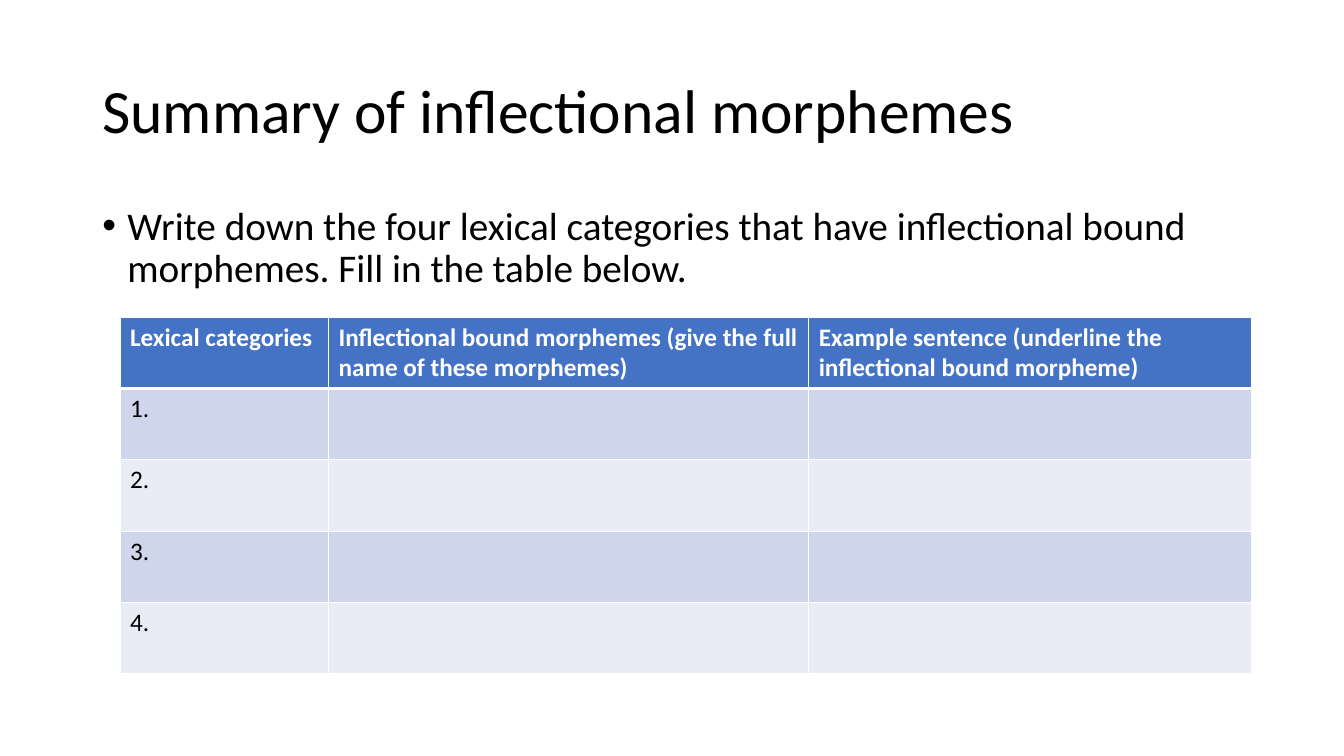
from dataclasses import dataclass

from lxml.etree import SubElement
from pptx import Presentation
from pptx.dml.color import RGBColor as Color
from pptx.enum.text import MSO_ANCHOR as Anchor
from pptx.oxml.ns import qn
from pptx.util import Pt


@dataclass(frozen=True)
class Theme:
    """Colours, font and type sizes of the slide."""
    font: str = "Calibri"
    text: str = "000000"
    inverse: str = "FFFFFF"
    header: str = "4472C4"
    bands: tuple = ("CFD5EA", "E9EBF5")
    title_size: int = 44
    body_size: int = 28
    table_size: int = 18
    thin: int = 1
    thick: int = 3


class SlideBuilder:
    """Adds styled elements to one slide."""

    def __init__(self, slide, theme):
        """Keep the slide and its theme."""
        self.slide = slide
        self.theme = theme

    def style(self, paragraph, size, color, bold=False):
        """Format every run of a paragraph."""
        for run in paragraph.runs:
            font = run.font
            font.name, font.size, font.bold = self.theme.font, Pt(size), bold
            font.color.rgb = Color.from_string(color)

    def text(self, box, text, size, anchor=Anchor.TOP):
        """Add a wrapped text box and return its paragraph."""
        shape = self.slide.shapes.add_textbox(*map(Pt, box))
        text_frame = shape.text_frame
        text_frame.word_wrap = True
        text_frame.vertical_anchor = anchor
        text_frame.text = text
        paragraph = text_frame.paragraphs[0]
        paragraph.line_spacing = 0.9
        self.style(paragraph, size, self.theme.text)
        return paragraph

    def bullet(self, box, text, size, indent=18):
        """Add a text box with one bulleted paragraph."""
        paragraph = self.text(box, text, size)
        paragraph.space_before = Pt(10)
        properties = paragraph._p.get_or_add_pPr()
        properties.set("marL", str(Pt(indent)))
        properties.set("indent", str(Pt(-indent)))
        SubElement(properties, qn("a:buFont"), typeface="Arial")
        SubElement(properties, qn("a:buChar"), char="•")

    def borders(self, cell, top, bottom):
        """Draw the four borders of a cell."""
        properties = cell._tc.get_or_add_tcPr()
        widths = {"L": self.theme.thin, "R": self.theme.thin, "T": top, "B": bottom}
        for side, width in widths.items():
            line = SubElement(properties, qn(f"a:ln{side}"), w=str(Pt(width)))
            fill = SubElement(line, qn("a:solidFill"))
            SubElement(fill, qn("a:srgbClr"), val=self.theme.inverse)

    def table(self, left, top, widths, row_height, rows):
        """Add a banded table whose first row is the header."""
        theme = self.theme
        frame = self.slide.shapes.add_table(
            len(rows), len(widths), Pt(left), Pt(top),
            Pt(sum(widths)), Pt(row_height * len(rows)))
        table = frame.table
        for column, width in zip(table.columns, widths):
            column.width = Pt(width)
        for index, texts in enumerate(rows):
            is_header = index == 0
            fill = theme.header if is_header else theme.bands[(index - 1) % 2]
            color = theme.inverse if is_header else theme.text
            above = theme.thick if index == 1 else theme.thin
            below = theme.thick if is_header else theme.thin
            for cell, text in zip(table.rows[index].cells, texts):
                self.borders(cell, above, below)
                cell.fill.solid()
                cell.fill.fore_color.rgb = Color.from_string(fill)
                cell.text_frame.text = text
                self.style(cell.text_frame.paragraphs[0], theme.table_size, color, is_header)


def main():
    """Build and save the presentation."""
    presentation = Presentation()
    presentation.slide_width, presentation.slide_height = Pt(960), Pt(540)
    slide = presentation.slides.add_slide(presentation.slide_layouts[6])
    theme = Theme()
    builder = SlideBuilder(slide, theme)
    builder.text((66, 28.75, 828, 104.4), "Summary of inflectional morphemes",
                 theme.title_size, Anchor.MIDDLE)
    builder.bullet((66, 143.75, 828, 342.6),
                   "Write down the four lexical categories that have inflectional bound "
                   "morphemes. Fill in the table below.", theme.body_size)
    header = ("Lexical categories",
              "Inflectional bound morphemes (give the full name of these morphemes)",
              "Example sentence (underline the inflectional bound morpheme)")
    categories = [(f"{number}.", "", "") for number in range(1, 5)]
    builder.table(85.7, 226.5, (149, 343, 316.5), 51, [header, *categories])
    presentation.save("out.pptx")


if __name__ == "__main__":
    main()
